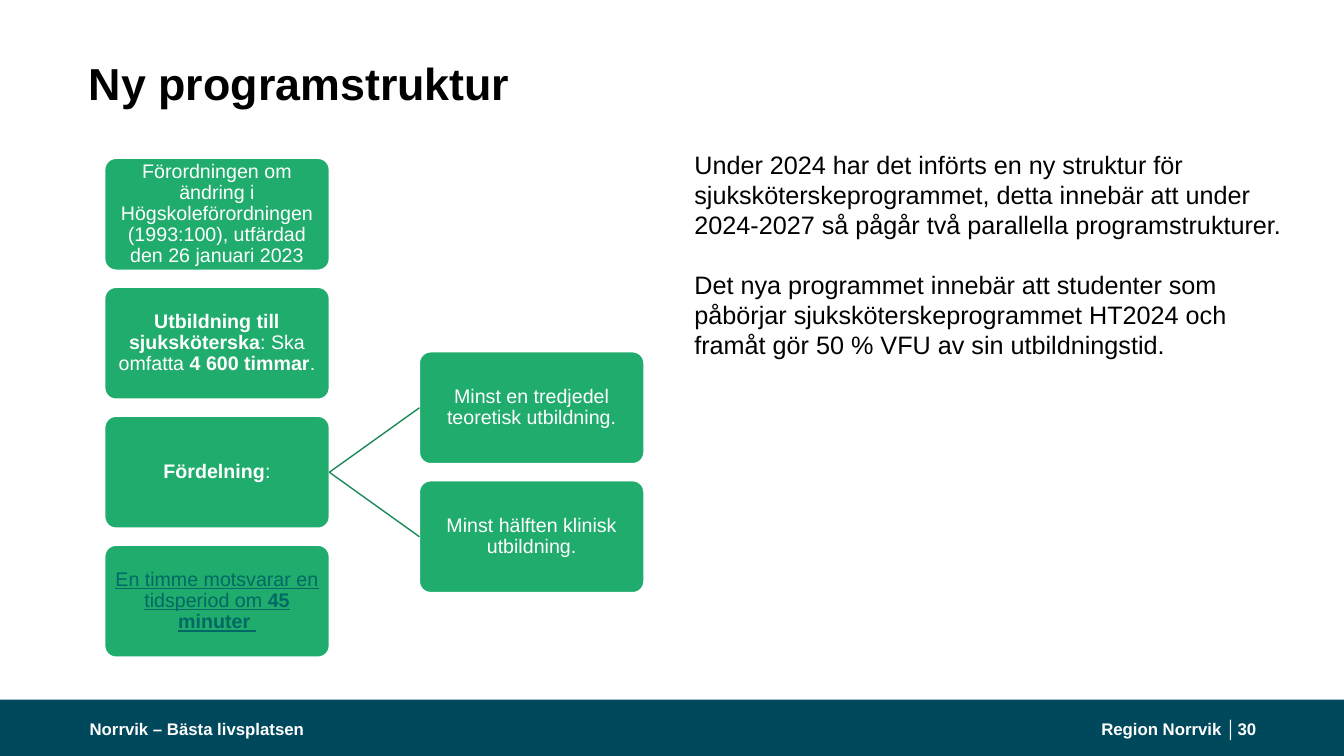
import dataclasses

import pptx
import pptx.dml.color
import pptx.enum.shapes
import pptx.enum.text
import pptx.oxml
import pptx.util

Cm = pptx.util.Cm
Pt = pptx.util.Pt
RGBColor = pptx.dml.color.RGBColor
ALIGN = pptx.enum.text.PP_ALIGN
ANCHOR = pptx.enum.text.MSO_ANCHOR


@dataclasses.dataclass(frozen=True)
class Theme:
    font: str = "Arial"
    black: RGBColor = RGBColor(0x00, 0x00, 0x00)
    white: RGBColor = RGBColor(0xFF, 0xFF, 0xFF)
    green: RGBColor = RGBColor(0x20, 0xAC, 0x6C)
    branch: RGBColor = RGBColor(0x1A, 0x8A, 0x56)
    link: RGBColor = RGBColor(0x00, 0x69, 0x66)
    footer: RGBColor = RGBColor(0x00, 0x49, 0x5D)
    title_size: int = 32
    body_size: int = 18
    box_size: int = 14
    footer_size: int = 12


THEME = Theme()

# Grid of the diagram, in centimetres
BOX_WIDTH, BOX_HEIGHT = 5.66, 2.82
COLUMN_LEFTS = (2.64, 10.57)
FIRST_TOP, ROW_PITCH = 3.99, 3.25

# Each box is a list of (text, bold) runs
STEPS = [
    [("Förordningen om ändring i Högskoleförordningen (1993:100), "
      "utfärdad den 26 januari 2023", False)],
    [("Utbildning till sjuksköterska", True), (": Ska omfatta ", False),
     ("4 600 timmar", True), (".", False)],
    [("Fördelning", True), (":", False)],
]
HOUR_NOTE = [("En timme motsvarar en tidsperiod om ", False),
             ("45 minuter", True), (" ", False)]
SHARES = ["Minst en tredjedel teoretisk utbildning.",
          "Minst hälften klinisk utbildning."]
BODY = [
    "Under 2024 har det införts en ny struktur för sjuksköterskeprogrammet, "
    "detta innebär att under 2024-2027 så pågår två parallella "
    "programstrukturer.",
    "Det nya programmet innebär att studenter som påbörjar "
    "sjuksköterskeprogrammet HT2024 och framåt gör 50 % VFU av sin "
    "utbildningstid.",
]


def style_paragraph(paragraph, size, color, bold=None, align=ALIGN.LEFT):
    paragraph.alignment = align
    font = paragraph.font
    font.name = THEME.font
    font.size = Pt(size)
    font.color.rgb = color
    font.bold = bold


def set_margins(frame, margin):
    frame.margin_left = frame.margin_right = Cm(margin)
    frame.margin_top = frame.margin_bottom = Cm(margin)


def place_title(slide, text):
    title = slide.shapes.title
    title.left, title.top = Cm(2.24), Cm(0.91)
    title.width, title.height = Cm(29.41), Cm(3.61)
    frame = title.text_frame
    frame.text = text
    frame.auto_size = pptx.enum.text.MSO_AUTO_SIZE.NONE
    frame.vertical_anchor = ANCHOR.TOP
    set_margins(frame, 0)
    frame.margin_top = Cm(0.64)
    paragraph = frame.paragraphs[0]
    paragraph.line_spacing = 0.9
    style_paragraph(paragraph, THEME.title_size, THEME.black, True)


def add_box(slide, column, row, runs, color=THEME.white, underline=None):
    box = slide.shapes.add_shape(
        pptx.enum.shapes.MSO_SHAPE.ROUNDED_RECTANGLE,
        Cm(COLUMN_LEFTS[column]), Cm(FIRST_TOP + row * ROW_PITCH),
        Cm(BOX_WIDTH), Cm(BOX_HEIGHT))
    box.adjustments[0] = 0.1
    box.shadow.inherit = False
    box.fill.solid()
    box.fill.fore_color.rgb = THEME.green
    box.line.color.rgb = THEME.white
    box.line.width = Pt(1)
    frame = box.text_frame
    frame.word_wrap = True
    frame.vertical_anchor = ANCHOR.MIDDLE
    set_margins(frame, 0.03)
    paragraph = frame.paragraphs[0]
    paragraph.line_spacing = 0.9
    style_paragraph(paragraph, THEME.box_size, color, align=ALIGN.CENTER)
    paragraph.font.underline = underline
    for text, bold in runs:
        run = paragraph.add_run()
        run.text = text
        run.font.bold = bold
    return box


def add_branch(slide, parent, child):
    branch = slide.shapes.add_connector(
        pptx.enum.shapes.MSO_CONNECTOR.STRAIGHT, 0, 0, 0, 0)
    branch.begin_connect(parent, 3)
    branch.end_connect(child, 1)
    branch.line.color.rgb = THEME.branch
    branch.line.width = Pt(1)
    properties = branch.element.spPr
    properties.append(properties.makeelement(
        pptx.oxml.ns.qn("a:effectLst"), {}))


def add_body(slide, texts):
    body = slide.shapes.add_textbox(Cm(17.25), Cm(3.63), Cm(15.52), Cm(5.64))
    frame = body.text_frame
    frame.word_wrap = True
    for index, text in enumerate(texts):
        paragraph = frame.add_paragraph() if index else frame.paragraphs[0]
        paragraph.text = text
        style_paragraph(paragraph, THEME.body_size, THEME.black)
        if index:
            paragraph.space_before = Pt(21)


def add_footer_text(slide, left, width, text, align=ALIGN.LEFT):
    label = slide.shapes.add_textbox(Cm(left), Cm(17.93), Cm(width), Cm(0.89))
    frame = label.text_frame
    frame.word_wrap = True
    frame.vertical_anchor = ANCHOR.MIDDLE
    set_margins(frame, 0)
    paragraph = frame.paragraphs[0]
    paragraph.text = text
    style_paragraph(paragraph, THEME.footer_size, THEME.white, True, align)


def add_footer(slide):
    band = slide.shapes.add_shape(
        pptx.enum.shapes.MSO_SHAPE.RECTANGLE,
        0, Cm(17.63), Cm(33.87), Cm(1.42))
    band.shadow.inherit = False
    band.fill.solid()
    band.fill.fore_color.rgb = THEME.footer
    band.line.fill.background()
    add_footer_text(slide, 2.26, 11.43, "Norrvik – Bästa livsplatsen")
    add_footer_text(slide, 27.18, 3.99, "Region Norrvik │", ALIGN.RIGHT)
    add_footer_text(slide, 31.19, 0.61, "30")


def main():
    presentation = pptx.Presentation()
    presentation.slide_width = Cm(33.87)
    presentation.slide_height = Cm(19.05)
    slide = presentation.slides.add_slide(presentation.slide_layouts[5])

    add_footer(slide)
    place_title(slide, "Ny programstruktur")

    # Left column, with the hour note as its last box
    steps = [add_box(slide, 0, row, runs) for row, runs in enumerate(STEPS)]
    add_box(slide, 0, len(STEPS), HOUR_NOTE, THEME.link, True)

    # Shares branch from the last step, half a row above and below it
    for index, text in enumerate(SHARES):
        share = add_box(slide, 1, 1.5 + index, [(text, False)])
        add_branch(slide, steps[-1], share)

    add_body(slide, BODY)
    presentation.save("out.pptx")


if __name__ == "__main__":
    main()
